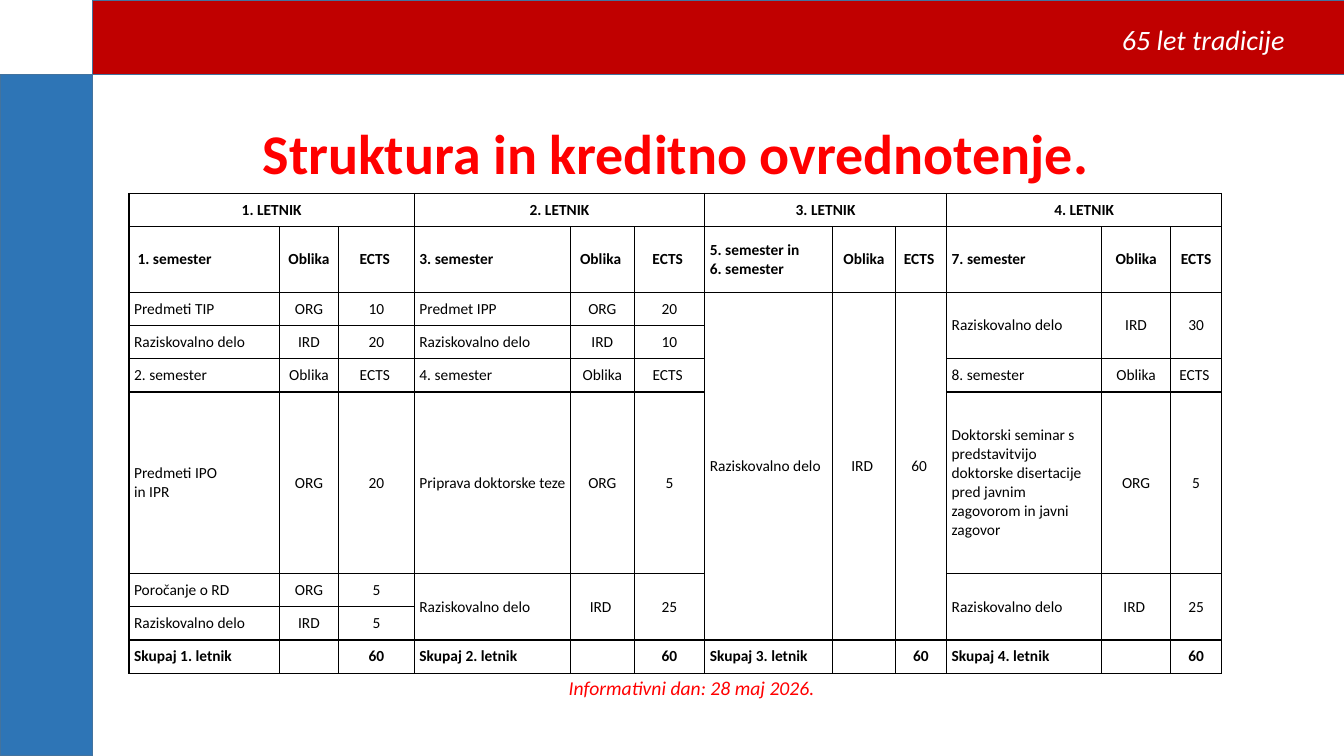
from dataclasses import dataclass

from lxml.etree import SubElement
from pptx import Presentation
from pptx.dml.color import RGBColor
from pptx.enum.shapes import MSO_SHAPE
from pptx.enum.text import MSO_ANCHOR, MSO_AUTO_SIZE, PP_ALIGN
from pptx.oxml.ns import qn
from pptx.slide import Slide
from pptx.table import Table, _Cell
from pptx.util import Inches, Pt


@dataclass(frozen=True)
class Theme:
    font: str = "Calibri"
    red: str = "C00000"
    blue: str = "2E75B6"
    outline: str = "43739E"
    accent: str = "FF0000"
    black: str = "000000"
    white: str = "FFFFFF"
    title: int = 40
    banner: int = 20
    footer: int = 14
    body: int = 11


@dataclass(frozen=True)
class Box:
    left: float
    top: float
    width: float
    height: float

    def lengths(self) -> list[int]:
        return [Inches(v) for v in (self.left, self.top, self.width, self.height)]


@dataclass(frozen=True)
class Band:
    box: Box
    color: str


@dataclass(frozen=True)
class Label:
    box: Box
    text: str
    size: int
    color: str
    bold: bool = False
    italic: bool = False
    align: PP_ALIGN = PP_ALIGN.CENTER
    spacing: float = 1.0
    wrap: bool = True


@dataclass(frozen=True)
class Entry:
    row: int
    course: str
    form: str
    ects: str
    rows: int = 1


THEME = Theme()
TABLE_BOX = Box(1.28, 1.92, 10.85, 4.74)
COLUMNS = [1.49, 0.59, 0.75, 1.55, 0.63, 0.7, 1.27, 0.62, 0.51, 1.54, 0.68, 0.51]
ROWS = [0.33, 0.65, 0.33, 0.33, 0.33, 1.8, 0.33, 0.33, 0.33]
TOTAL_ROW = len(ROWS) - 1
BOLD_ROWS = (0, 1, TOTAL_ROW)
YEARS = [
    [
        Entry(1, " 1. semester", "Oblika", "ECTS "),
        Entry(2, "Predmeti TIP", "ORG", "10"),
        Entry(3, "Raziskovalno delo", "IRD", "20"),
        Entry(4, "2. semester", "Oblika", "ECTS "),
        Entry(5, "Predmeti IPO\nin IPR", "ORG", "20"),
        Entry(6, "Poročanje o RD", "ORG", "5"),
        Entry(7, "Raziskovalno delo", "IRD", "5"),
    ],
    [
        Entry(1, "3. semester", "Oblika ", "ECTS "),
        Entry(2, "Predmet IPP", "ORG", "20"),
        Entry(3, "Raziskovalno delo", "IRD", "10"),
        Entry(4, "4. semester", "Oblika", "ECTS "),
        Entry(5, "Priprava doktorske teze", "ORG", "5"),
        Entry(6, "Raziskovalno delo ", "IRD ", "25", 2),
    ],
    [
        Entry(1, "5. semester in\n6. semester", "Oblika", "ECTS "),
        Entry(2, "Raziskovalno delo", "IRD ", "60 ", 6),
    ],
    [
        Entry(1, "7. semester", "Oblika", "ECTS"),
        Entry(2, "Raziskovalno delo", "IRD", "30", 2),
        Entry(4, "8. semester", "Oblika", "ECTS "),
        Entry(5, "Doktorski seminar s predstavitvijo doktorske disertacije "
                 "pred javnim zagovorom in javni zagovor", "ORG", "5"),
        Entry(6, "Raziskovalno delo", "IRD ", "25", 2),
    ],
]
BANDS = [
    Band(Box(0.92, 0, 12.42, 0.74), THEME.red),
    Band(Box(0, 0.74, 0.92, 6.76), THEME.blue),
]
TITLE = Label(Box(1.12, 1.2, 11.16, 6.04), "Struktura in kreditno ovrednotenje.",
              THEME.title, THEME.accent, bold=True, spacing=0.9)
BANNER = Label(Box(11.03, 0.17, 1.83, 0.44), "65 let tradicije", THEME.banner,
               THEME.white, italic=True, align=PP_ALIGN.LEFT, wrap=False)
FOOTER = Label(Box(3.34, 6.66, 7.04, 0.4), "Informativni dan: 28 maj 2026.",
               THEME.footer, THEME.accent, italic=True)


def add_run(p, text: str, size: int, color: str, bold: bool, italic: bool = False) -> None:
    r = p.add_run()
    r.text = text
    r.font.name = THEME.font
    r.font.size = Pt(size)
    r.font.bold = bold
    r.font.italic = italic
    r.font.color.rgb = RGBColor.from_string(color)


def add_label(s: Slide, label: Label) -> None:
    tf = s.shapes.add_textbox(*label.box.lengths()).text_frame
    tf.word_wrap = label.wrap
    if not label.wrap:
        tf.auto_size = MSO_AUTO_SIZE.SHAPE_TO_FIT_TEXT
    p = tf.paragraphs[0]
    p.alignment = label.align
    p.line_spacing = label.spacing
    add_run(p, label.text, label.size, label.color, label.bold, label.italic)


def add_band(s: Slide, band: Band) -> None:
    sp = s.shapes.add_shape(MSO_SHAPE.RECTANGLE, *band.box.lengths())
    sp.shadow.inherit = False
    sp.fill.solid()
    sp.fill.fore_color.rgb = RGBColor.from_string(band.color)
    sp.line.color.rgb = RGBColor.from_string(THEME.outline)
    sp.line.width = Pt(1)


def format_cell(cell: _Cell) -> None:
    cell.margin_left = cell.margin_right = Inches(0.05)
    cell.margin_top = cell.margin_bottom = 0
    cell.vertical_anchor = MSO_ANCHOR.MIDDLE
    tc_pr = cell._tc.get_or_add_tcPr()
    for side in ("a:lnL", "a:lnR", "a:lnT", "a:lnB"):
        ln = SubElement(tc_pr, qn(side), w=str(Pt(1)))
        fill = SubElement(ln, qn("a:solidFill"))
        SubElement(fill, qn("a:srgbClr"), val=THEME.black)
    cell.fill.background()


def write_cell(cell: _Cell, text: str, bold: bool, align: PP_ALIGN) -> None:
    tf = cell.text_frame
    for i, line in enumerate(text.split("\n")):
        p = tf.add_paragraph() if i else tf.paragraphs[0]
        p.alignment = align
        if line:
            add_run(p, line, THEME.body, THEME.black, bold)


def add_year(table: Table, year: int, entries: list[Entry]) -> None:
    first = 3 * (year - 1)
    heading = table.cell(0, first)
    heading.merge(table.cell(0, first + 2))
    write_cell(heading, f"{year}. LETNIK", True, PP_ALIGN.CENTER)
    total = Entry(TOTAL_ROW, f"Skupaj {year}. letnik", "", "60")
    for entry in [*entries, total]:
        for i, text in enumerate((entry.course, entry.form, entry.ects)):
            cell = table.cell(entry.row, first + i)
            if entry.rows > 1:
                cell.merge(table.cell(entry.row + entry.rows - 1, first + i))
            align = PP_ALIGN.CENTER if i else PP_ALIGN.LEFT
            write_cell(cell, text, entry.row in BOLD_ROWS, align)


def add_curriculum(s: Slide) -> None:
    table = s.shapes.add_table(len(ROWS), len(COLUMNS), *TABLE_BOX.lengths()).table
    table.first_row = table.horz_banding = False
    for column, width in zip(table.columns, COLUMNS):
        column.width = Inches(width)
    for row, height in zip(table.rows, ROWS):
        row.height = Inches(height)
    for cell in table.iter_cells():
        format_cell(cell)
    for year, entries in enumerate(YEARS, 1):
        add_year(table, year, entries)


def main() -> None:
    prs = Presentation()
    prs.slide_width, prs.slide_height = Inches(13.33), Inches(7.5)
    s = prs.slides.add_slide(prs.slide_layouts[6])
    add_label(s, TITLE)
    add_curriculum(s)
    for band in BANDS:
        add_band(s, band)
    for label in (BANNER, FOOTER):
        add_label(s, label)
    prs.save("out.pptx")


if __name__ == "__main__":
    main()
